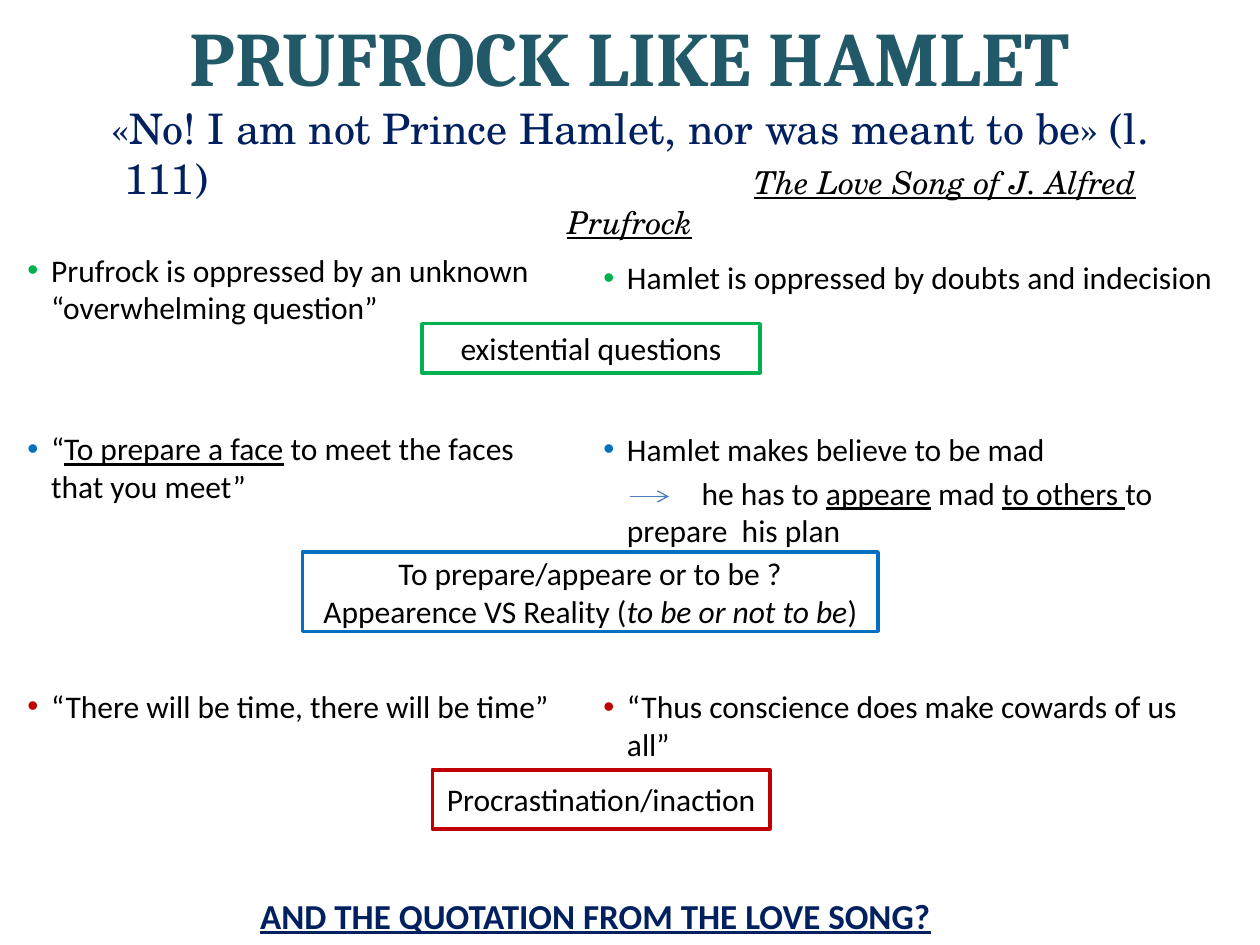
from lxml.etree import SubElement
from pptx import Presentation
from pptx.dml.color import RGBColor
from pptx.enum.shapes import MSO_CONNECTOR as Connector, MSO_SHAPE as Shape
from pptx.enum.text import MSO_ANCHOR as Anchor, PP_ALIGN as Align
from pptx.oxml.ns import qn
from pptx.util import Pt

GREEN, BLUE, RED = "00B050", "0070C0", "C00000"
BLACK, NAVY, TEAL, ARROW = "000000", "002060", "215968", "4B7EBC"
HANGING = 13.5

# A run is (text, style); style letters: b bold, i italic, u underline
TITLE_RUNS = [
    # text, style, size, font, colour
    ("PRUFROCK LIKE HAMLET\v", "b", 44, "Cambria", TEAL),
    ("«No! I am not Prince Hamlet, nor was meant to be» (l. 111) \t", "", 24, "TeX Gyre Schola", NAVY),
    ("\t", "iu", 24, "TeX Gyre Schola", NAVY),
    ("The Love Song of J. Alfred Prufrock", "iu", 18, "TeX Gyre Schola", BLACK),
]

# Each column: box, then (bullet colour or None, space before, runs)
COLUMNS = [
    ((8.6, 139.7, 323.3, 356.4), [
        (GREEN, 0, [("Prufrock is oppressed by an unknown “overwhelming question”", "")]),
        (BLUE, 59, [("“", ""), ("To prepare a face", "u"), (" to meet the faces that you meet”", "")]),
        (RED, 104, [("“There will be time, there will be time”", "")]),
    ]),
    ((337.7, 144, 368.6, 356.4), [
        (GREEN, 0, [("Hamlet is oppressed by doubts and indecision", "")]),
        (BLUE, 76.3, [("Hamlet makes believe to be mad", "")]),
        (None, 3.6, [("he has to ", ""), ("appeare", "u"), (" mad ", ""),
                     ("to others ", "u"), ("to prepare  his plan", "")]),
        (RED, 79, [("“Thus conscience does make cowards of us all”", "")]),
    ]),
]

# Shared themes: box, outline colour, lines of runs
THEMES = [
    ((241.2, 185, 193, 28.1), GREEN, [[("existential questions", "")]]),
    ((172.8, 315.4, 329, 45.4), BLUE, [
        [("To prepare/appeare or to be ?", "")],
        [("Appearence VS Reality (", ""), ("to be or not to be", "i"), (")", "")]]),
    ((247, 439.9, 193, 33.8), RED, [[("Procrastination/inaction", "")]]),
]
CLOSING = "AND THE QUOTATION FROM THE LOVE SONG?"


def rgb(value):
    return RGBColor.from_string(value)


def points(values):
    return [Pt(value) for value in values]


def add_run(paragraph, text, style="", size=18, font="Calibri", color=BLACK):
    run = paragraph.add_run()
    run.text = text.rstrip("\v")
    run.font.size, run.font.name = Pt(size), font
    run.font.color.rgb = rgb(color)
    run.font.bold, run.font.italic, run.font.underline = (letter in style for letter in "biu")
    if text.endswith("\v"):
        paragraph.add_line_break()


def add_text(slide, box, anchor=Anchor.TOP):
    frame = slide.shapes.add_textbox(*points(box)).text_frame
    frame.word_wrap = True
    frame.vertical_anchor = anchor
    return frame


def remove_insets(frame):
    frame.margin_left = frame.margin_right = frame.margin_top = frame.margin_bottom = 0


def next_paragraph(frame, index):
    return frame.add_paragraph() if index else frame.paragraphs[0]


def set_indent(paragraph, first_line, bullet):
    properties = paragraph._p.get_or_add_pPr()
    properties.set("marL", str(Pt(HANGING)))
    properties.set("indent", str(Pt(first_line)))
    if bullet:
        color = SubElement(properties, qn("a:buClr"))
        SubElement(color, qn("a:srgbClr"), val=bullet)
        SubElement(properties, qn("a:buFont"), typeface="Arial")
        SubElement(properties, qn("a:buChar"), char="•")


presentation = Presentation()
presentation.slide_width, presentation.slide_height = Pt(720), Pt(540)
slide = presentation.slides.add_slide(presentation.slide_layouts[6])

# Title and quotation
title = add_text(slide, (36, 26.6, 648, 90), Anchor.MIDDLE).paragraphs[0]
title.alignment = Align.CENTER
tabs = SubElement(title._p.get_or_add_pPr(), qn("a:tabLst"))
SubElement(tabs, qn("a:tab"), pos=str(Pt(332)), algn="l")
for run_data in TITLE_RUNS:
    add_run(title, *run_data)

# The two columns
for box, entries in COLUMNS:
    frame = add_text(slide, box)
    for index, (bullet, space, runs) in enumerate(entries):
        paragraph = next_paragraph(frame, index)
        paragraph.space_before = Pt(space)
        set_indent(paragraph, -HANGING if bullet else 42.6, bullet)
        for text, style in runs:
            add_run(paragraph, text, style)

# Framed themes between the columns
for box, color, lines in THEMES:
    shape = slide.shapes.add_shape(Shape.RECTANGLE, *points(box))
    shape.shadow.inherit = False
    shape.fill.background()
    shape.line.color.rgb, shape.line.width = rgb(color), Pt(2)
    frame = shape.text_frame
    frame.word_wrap = True
    frame.vertical_anchor = Anchor.MIDDLE
    remove_insets(frame)
    for index, runs in enumerate(lines):
        paragraph = next_paragraph(frame, index)
        paragraph.alignment = Align.CENTER
        for text, style in runs:
            add_run(paragraph, text, style)

# Closing question
frame = add_text(slide, (139, 511, 402.5, 25))
remove_insets(frame)
frame.paragraphs[0].alignment = Align.CENTER
add_run(frame.paragraphs[0], CLOSING, "bu", 20, color=NAVY)

# Arrow before Hamlet's plan
arrow = slide.shapes.add_connector(Connector.STRAIGHT, *points((360, 283.7, 382.3, 283.7)))
arrow.line.color.rgb, arrow.line.width = rgb(ARROW), Pt(0.75)
SubElement(arrow.line._get_or_add_ln(), qn("a:tailEnd"), type="arrow")
SubElement(arrow._element.spPr, qn("a:effectLst"))

presentation.save("out.pptx")
